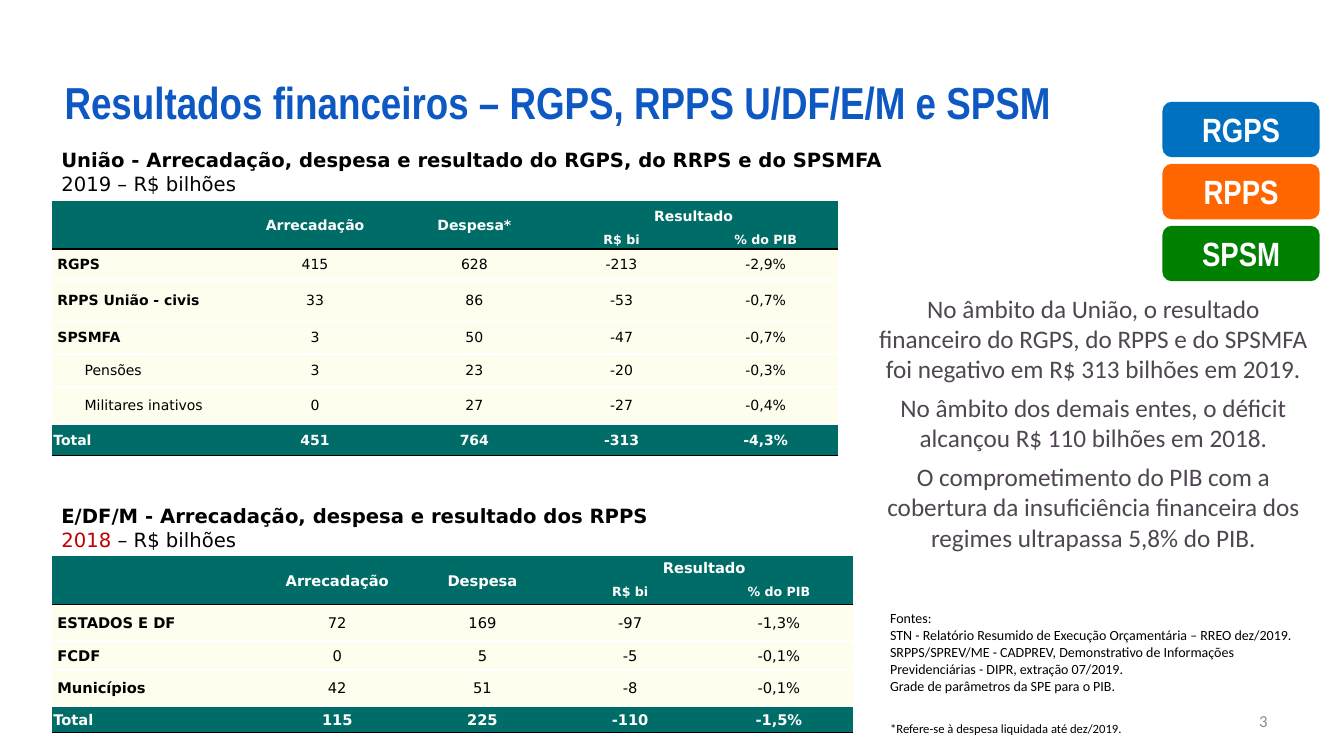
from dataclasses import dataclass

from lxml import etree
from pptx import Presentation
from pptx import util as u
from pptx.dml.color import RGBColor
from pptx.enum import shapes, text
from pptx.oxml import ns


@dataclass(frozen=True)
class Theme:
    blue: str = "0E58C4"
    teal: str = "006C67"
    cream: str = "FFFDED"
    white: str = "FFFFFF"
    black: str = "000000"
    red: str = "C00000"
    grey: str = "8C8C8C"
    plum: str = "504652"
    rgps: str = "0070C0"
    rpps: str = "FF6600"
    spsm: str = "008000"
    heading: str = "Arial Narrow"
    body: str = "Calibri"
    data: str = "DejaVu Sans"
    title_size: float = 32
    badge_size: float = 24
    message_size: float = 18
    caption_size: float = 14
    number_size: float = 12
    state_size: float = 10.5
    union_size: float = 10
    source_size: float = 10
    small_size: float = 9


THEME = Theme()
NO_STYLE = "{2D5ABB26-0587-4C30-8999-92F81FD0307C}"
CENTER = text.PP_ALIGN.CENTER
HEADER = [["", "Arrecadação", "Despesa", "Resultado", ""], ["", "", "", "R$ bi", "% do PIB"]]
UNION_ROWS = [
    ["RGPS", "415", "628", "-213", "-2,9%"],
    ["RPPS União - civis", "33", "86", "-53", "-0,7%"],
    ["SPSMFA", "3", "50", "-47", "-0,7%"],
    ["Pensões", "3", "23", "-20", "-0,3%"],
    ["Militares inativos", "0", "27", "-27", "-0,4%"],
    ["Total", "451", "764", "-313", "-4,3%"],
]
STATE_ROWS = [
    ["ESTADOS E DF", "72", "169", "-97", "-1,3%"],
    ["FCDF", "0", "5", "-5", "-0,1%"],
    ["Municípios", "42", "51", "-8", "-0,1%"],
    ["Total", "115", "225", "-110", "-1,5%"],
]
SUBITEMS = ("Pensões", "Militares inativos")
MESSAGES = [
    "No âmbito da União, o resultado financeiro do RGPS, do RPPS e do SPSMFA foi negativo em R$ 313 bilhões em 2019.",
    "No âmbito dos demais entes, o déficit alcançou R$ 110 bilhões em 2018.",
    "O comprometimento do PIB com a cobertura da insuficiência financeira dos regimes ultrapassa 5,8% do PIB.",
]
SOURCES = [
    "Fontes:",
    "STN - Relatório Resumido de Execução Orçamentária – RREO dez/2019.",
    "SRPPS/SPREV/ME - CADPREV, Demonstrativo de Informações Previdenciárias - DIPR, extração 07/2019.",
    "Grade de parâmetros da SPE para o PIB.",
]


def inches(box):
    return [u.Inches(length) for length in box]


def place(shape, box):
    shape.left, shape.top, shape.width, shape.height = inches(box)


def add_span(para, wording, size, font, color, bold=False):
    span = para.add_run()
    span.text = wording
    span.font.size, span.font.name, span.font.bold = u.Pt(size), font, bold
    span.font.color.rgb = RGBColor.from_string(color)


def next_para(frame, index):
    return frame.add_paragraph() if index else frame.paragraphs[0]


def add_text(page, box, lines, wrap=True, align=None):
    frame = page.shapes.add_textbox(*inches(box)).text_frame
    frame.word_wrap = wrap
    for index, spans in enumerate(lines):
        para = next_para(frame, index)
        para.alignment = align
        for span in spans:
            add_span(para, *span)
    return frame


def add_title(page, box):
    title = page.shapes.title
    place(title, box)
    frame = title.text_frame
    frame.auto_size = text.MSO_AUTO_SIZE.NONE
    frame.margin_left = u.Inches(0.6)
    para = frame.paragraphs[0]
    para.alignment = text.PP_ALIGN.LEFT
    add_span(para, "Resultados financeiros – RGPS, RPPS U/DF/E/M e SPSM",
             THEME.title_size, THEME.heading, THEME.blue, True)


def add_messages(page, box):
    body = page.placeholders[1]
    place(body, box)
    frame = body.text_frame
    frame.auto_size = text.MSO_AUTO_SIZE.NONE
    for index, message in enumerate(MESSAGES):
        para = next_para(frame, index)
        para.alignment = CENTER
        para.space_before, para.space_after = u.Pt(0), u.Pt(6)
        properties = para._p.get_or_add_pPr()
        properties.set("marL", "0")
        properties.set("indent", "0")
        etree.SubElement(properties, ns.qn("a:buNone"))
        add_span(para, message, THEME.message_size, THEME.body, THEME.plum)


def add_badges(page, box):
    left, top, width, height = box
    badges = [("RGPS", THEME.rgps), ("RPPS", THEME.rpps), ("SPSM", THEME.spsm)]
    badge_height = 0.55
    pitch = (height - badge_height) / (len(badges) - 1)
    for index, (name, color) in enumerate(badges):
        badge = page.shapes.add_shape(shapes.MSO_SHAPE.ROUNDED_RECTANGLE,
                                      *inches((left, top + index * pitch, width, badge_height)))
        badge.shadow.inherit = False
        badge.fill.solid()
        badge.fill.fore_color.rgb = RGBColor.from_string(color)
        badge.line.fill.background()
        badge.text_frame.vertical_anchor = text.MSO_ANCHOR.MIDDLE
        para = badge.text_frame.paragraphs[0]
        para.alignment = CENTER
        add_span(para, name, THEME.badge_size, THEME.heading, THEME.white, True)


def add_border(cell, side, color, points):
    line = etree.SubElement(cell._tc.get_or_add_tcPr(), ns.qn("a:ln" + side), w=str(u.Pt(points)))
    fill = etree.SubElement(line, ns.qn("a:solidFill"))
    etree.SubElement(fill, ns.qn("a:srgbClr"), val=color)


def format_cell(cell, wording, row, column, is_total, size):
    is_header = row < len(HEADER)
    is_dark = is_header or is_total
    is_label = column == 0 and not is_header
    cell.fill.solid()
    cell.fill.fore_color.rgb = RGBColor.from_string(THEME.teal if is_dark else THEME.cream)
    cell.vertical_anchor = text.MSO_ANCHOR.MIDDLE
    cell.margin_left = cell.margin_right = cell.margin_top = u.Inches(0.01)
    cell.margin_bottom = 0
    if is_label and not is_total:
        cell.margin_left = u.Inches(0.32 if wording in SUBITEMS else 0.05)
    para = cell.text_frame.paragraphs[0]
    para.alignment = text.PP_ALIGN.LEFT if is_label else CENTER
    if wording:
        bold = is_dark or (is_label and wording not in SUBITEMS)
        add_span(para, wording, THEME.small_size if row == 1 else size, THEME.data,
                 THEME.white if is_dark else THEME.black, bold)
    else:
        etree.SubElement(para._p, ns.qn("a:endParaRPr"), sz="900")


def add_results(page, box, rows, widths, heights, size, rules):
    table = page.shapes.add_table(len(rows), len(widths), *inches(box)).table
    table._tbl.tblPr.find(ns.qn("a:tableStyleId")).text = NO_STYLE
    table.first_row = table.horz_banding = False
    for column, width in zip(table.columns, widths):
        column.width = u.Inches(width)
    for row, height in zip(table.rows, heights):
        row.height = u.Inches(height)
    for column in range(3):
        table.cell(0, column).merge(table.cell(1, column))
    table.cell(0, 3).merge(table.cell(0, 4))
    last = len(rows) - 1
    for row, values in enumerate(rows):
        for column, wording in enumerate(values):
            cell = table.cell(row, column)
            if row in rules:
                add_border(cell, "T", *rules[row])
            bottom = 2 if row == 0 and column < 3 else row + 1
            if bottom in rules:
                add_border(cell, "B", *rules[bottom])
            format_cell(cell, wording, row, column, row == last, size)


def add_section(page, box, caption, period, results):
    left, top, width, height = box
    lines = [[(caption, THEME.caption_size, THEME.data, THEME.black, True)],
             [(wording, THEME.caption_size, THEME.data, color) for wording, color in period]]
    add_text(page, (left, top, width, 0.57), lines, wrap=False)
    add_results(page, (left + 0.01, top + 0.57, sum(results["widths"]), height - 0.57), **results)


def add_sources(page, box):
    left, top, width, height = box
    add_text(page, (left, top, width, 0.94),
             [[(line, THEME.source_size, THEME.body, THEME.black)] for line in SOURCES])
    add_text(page, (left, top + height - 0.25, 2.52, 0.25),
             [[("*Refere-se à despesa liquidada até dez/2019.", THEME.small_size, THEME.body, THEME.black)]],
             wrap=False)


def add_page_number(page, box):
    frame = add_text(page, box, [[("3", THEME.number_size, THEME.body, THEME.grey)]],
                     align=text.PP_ALIGN.RIGHT)
    frame.vertical_anchor = text.MSO_ANCHOR.MIDDLE


def main():
    deck = Presentation()
    deck.slide_width, deck.slide_height = u.Inches(13.33), u.Inches(7.5)
    page = deck.slides.add_slide(deck.slide_layouts[1])
    union_header = [["", "Arrecadação", "Despesa*", "Resultado", ""], HEADER[1]]
    white_rule, thin_rule = (THEME.white, 1.5), (THEME.black, 0.5)
    add_title(page, (0.04, 0.69, 11.14, 0.64))
    add_section(page, (0.51, 1.42, 8.5, 3.09),
                "União - Arrecadação, despesa e resultado do RGPS, do RRPS e do SPSMFA",
                [("2019 – R$ bilhões", THEME.black)],
                dict(rows=union_header + UNION_ROWS, widths=[1.77, 1.67, 1.49, 1.43, 1.43],
                     heights=[0.3, 0.18, 0.31, 0.4, 0.33, 0.33, 0.37, 0.31], size=THEME.union_size,
                     rules={2: (THEME.black, 1), **dict.fromkeys(range(3, 8), white_rule), 8: thin_rule}))
    add_section(page, (0.51, 4.95, 6.2, 2.33),
                "E/DF/M - Arrecadação, despesa e resultado dos RPPS",
                [("2018 ", THEME.red), ("– R$ bilhões", THEME.black)],
                dict(rows=HEADER + STATE_ROWS, widths=[2.11, 1.43, 1.45, 1.48, 1.47],
                     heights=[0.22, 0.26, 0.36, 0.29, 0.36, 0.26], size=THEME.state_size,
                     rules={2: thin_rule, 3: white_rule, 4: white_rule, 6: thin_rule}))
    add_badges(page, (11.53, 1.01, 1.56, 1.78))
    add_messages(page, (8.61, 2.86, 4.47, 2.69))
    add_sources(page, (8.73, 6, 4.47, 1.35))
    add_page_number(page, (9.56, 6.95, 3.11, 0.4))
    deck.save("out.pptx")


if __name__ == "__main__":
    main()
